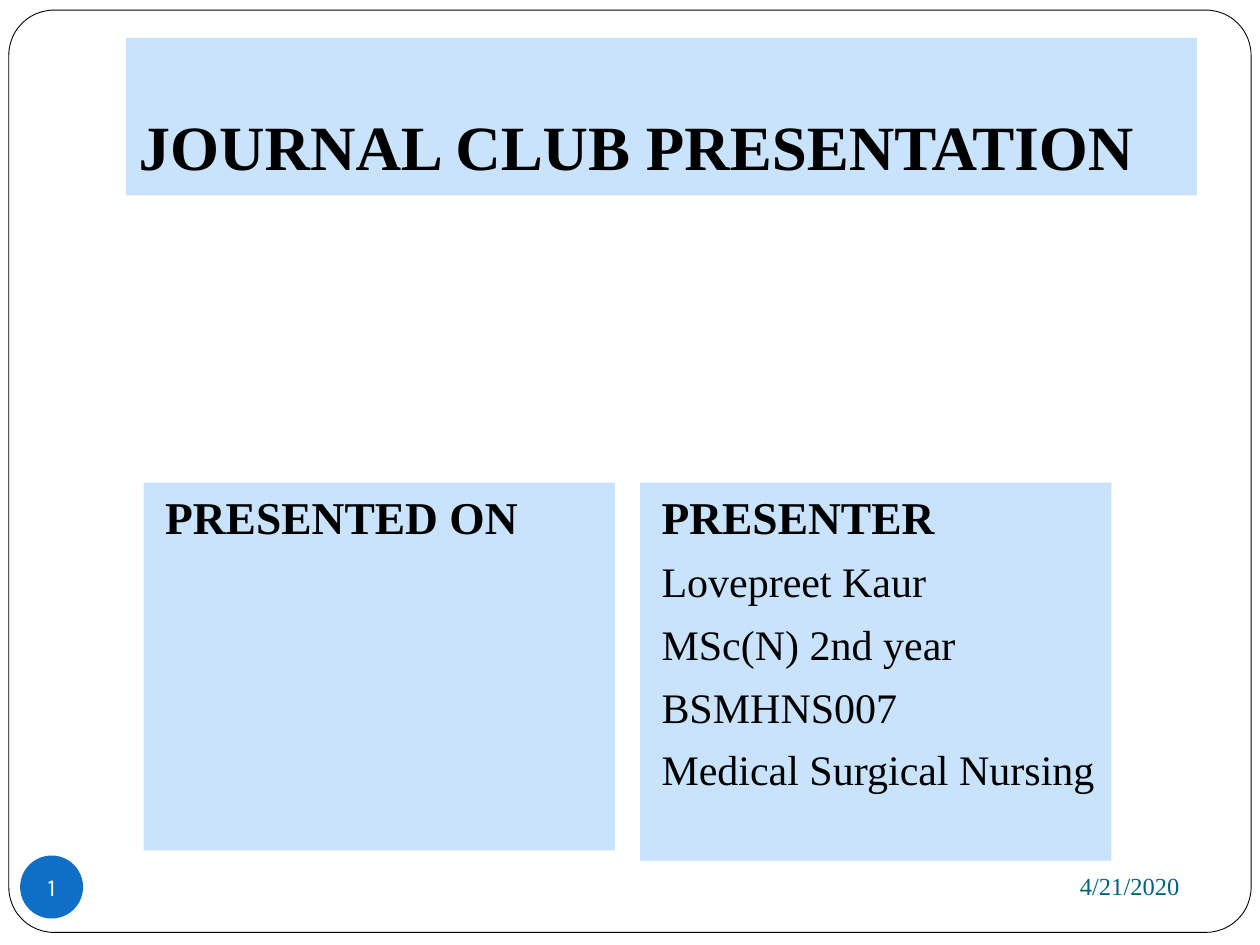
from dataclasses import dataclass

from lxml import etree
from pptx import Presentation
from pptx.dml.color import RGBColor
from pptx.enum.shapes import MSO_SHAPE
from pptx.enum.text import MSO_ANCHOR, MSO_AUTO_SIZE, PP_ALIGN
from pptx.oxml.ns import qn
from pptx.util import Inches, Pt

ROUNDED, OVAL = MSO_SHAPE.ROUNDED_RECTANGLE, MSO_SHAPE.OVAL
TOP, MIDDLE, BOTTOM = MSO_ANCHOR.TOP, MSO_ANCHOR.MIDDLE, MSO_ANCHOR.BOTTOM
LEFT, CENTER, RIGHT = PP_ALIGN.LEFT, PP_ALIGN.CENTER, PP_ALIGN.RIGHT
NO_AUTOFIT = MSO_AUTO_SIZE.NONE
SERIF, SANS = "Times New Roman", "Karla"
COLORS = {"paper": "FFFFFF", "ink": "000000", "panel": "C8E3FB",
          "badge": "0F6FC6", "date": "04617B"}
TWO_CONTENT_LAYOUT = 3


@dataclass
class Panel:
    placeholder: int
    left: float
    height: float
    heading: str
    details: tuple[str, ...] = ()


PANELS = (
    Panel(1, 1.14, 2.92, "PRESENTED ON"),
    Panel(2, 5.08, 3, "PRESENTER",
          ("Lovepreet Kaur", "MSc(N) 2nd year", "BSMHNS007", "Medical Surgical Nursing")),
)


def set_all(target, values: dict) -> None:
    for name, value in values.items():
        setattr(target, name, value)


def place(shape, left: float, top: float, width: float, height: float) -> None:
    set_all(shape, {"left": Inches(left), "top": Inches(top),
                    "width": Inches(width), "height": Inches(height)})


def fill(shape, color: str) -> None:
    shape.fill.solid()
    shape.fill.fore_color.rgb = RGBColor.from_string(COLORS[color])


def write(paragraph, text: str, size: float, color: str = "ink", bold: bool = False,
          font: str = SERIF, align=LEFT) -> None:
    paragraph.alignment = align
    run = paragraph.add_run()
    run.text = text
    set_all(run.font, {"name": font, "size": Pt(size), "bold": bold})
    run.font.color.rgb = RGBColor.from_string(COLORS[color])


def draw_panel(slide, panel: Panel) -> None:
    body = slide.placeholders[panel.placeholder]
    place(body, panel.left, 3.83, 3.74, panel.height)
    fill(body, "panel")
    frame = body.text_frame
    set_all(frame, {"word_wrap": True, "auto_size": NO_AUTOFIT, "vertical_anchor": TOP})
    for index, line in enumerate((panel.heading, *panel.details)):
        is_heading = index == 0
        paragraph = frame.paragraphs[0] if is_heading else frame.add_paragraph()
        paragraph.space_before = Pt(7)
        write(paragraph, line, 26 if is_heading else 24, bold=is_heading)
        # Plain indented line without a bullet
        properties = paragraph._p.get_or_add_pPr()
        properties.set("marL", str(Inches(0.07)))
        properties.set("indent", "0")
        etree.SubElement(properties, qn("a:buNone"))


def main() -> None:
    prs = Presentation()
    prs.slide_width, prs.slide_height = Inches(10), Inches(7.5)
    slide = prs.slides.add_slide(prs.slide_layouts[TWO_CONTENT_LAYOUT])
    shapes = slide.shapes

    # Rounded page border, behind everything else
    border = shapes.add_shape(ROUNDED, 0, 0, 0, 0)
    place(border, 0.07, 0.08, 9.86, 7.32)
    border.adjustments[0] = 0.049
    border.shadow.inherit = False
    fill(border, "paper")
    border.line.color.rgb = RGBColor.from_string(COLORS["ink"])
    border.line.width = Pt(0.5)
    shapes._spTree.insert(2, border._element)

    # Title band
    title = shapes.title
    place(title, 1, 0.3, 8.5, 1.25)
    fill(title, "panel")
    set_all(title.text_frame, {"word_wrap": True, "auto_size": NO_AUTOFIT,
                               "vertical_anchor": BOTTOM, "margin_bottom": Inches(0.1)})
    write(title.text_frame.paragraphs[0], "JOURNAL CLUB PRESENTATION", 36, bold=True)

    # Date
    date = shapes.add_textbox(0, 0, 0, 0)
    place(date, 6.75, 6.77, 2.71, 0.52)
    set_all(date.text_frame, {"word_wrap": True, "vertical_anchor": MIDDLE})
    write(date.text_frame.paragraphs[0], "4/21/2020", 14, "date", align=RIGHT)

    # Page number badge
    badge = shapes.add_shape(OVAL, 0, 0, 0, 0)
    place(badge, 0.16, 6.79, 0.5, 0.5)
    badge.shadow.inherit = False
    fill(badge, "badge")
    badge.line.fill.background()
    set_all(badge.text_frame, {"word_wrap": False, "vertical_anchor": MIDDLE,
                               "margin_left": 0, "margin_right": 0,
                               "margin_top": 0, "margin_bottom": 0})
    write(badge.text_frame.paragraphs[0], "1", 14, "paper", font=SANS, align=CENTER)

    # Presentation details
    for panel in PANELS:
        draw_panel(slide, panel)

    prs.save("out.pptx")


if __name__ == "__main__":
    main()
